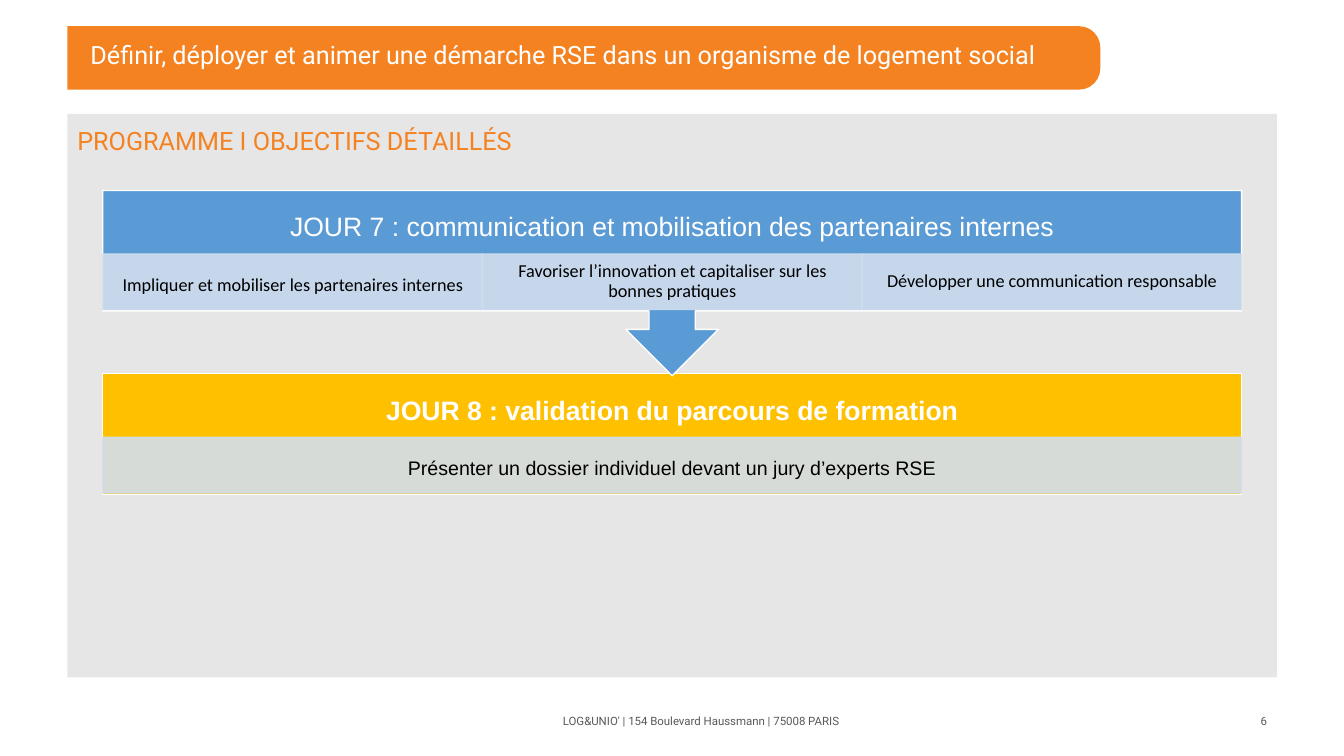
import pptx
import pptx.dml.color
import pptx.enum.shapes
import pptx.enum.text
import pptx.oxml
import pptx.oxml.ns
import pptx.util
from pptx.util import Cm

COLORS = {
    "orange": "F58221", "white": "FFFFFF", "panel": "E7E6E6", "grey": "58595B",
    "gold": "FFC000", "blue": "5B9BD5", "pale": "D2DEEF", "black": "000000",
}
SHAPES = pptx.enum.shapes.MSO_SHAPE
ALIGN = pptx.enum.text.PP_ALIGN
ANCHOR = pptx.enum.text.MSO_ANCHOR


def rgb(name):
    return pptx.dml.color.RGBColor.from_string(COLORS[name])


def make_translucent(fill_format, percent):
    """Set the opacity of a solid colour, in percent."""
    color = fill_format.fore_color._xFill[0]
    alpha = pptx.oxml.parse_xml(
        f'<a:alpha {pptx.oxml.ns.nsdecls("a")} val="{percent * 1000}"/>')
    color.append(alpha)


def add_block(page, kind, box, color, line=None, opacity=None):
    block = page.shapes.add_shape(kind, *map(Cm, box))
    block.shadow.inherit = False
    block.fill.solid()
    block.fill.fore_color.rgb = rgb(color)
    if line:
        block.line.color.rgb = rgb(line)
        block.line.width = pptx.util.Pt(1)
    else:
        block.line.fill.background()
    if opacity:
        make_translucent(block.fill, opacity)
        make_translucent(block.line.fill, opacity)
    return block


def write(shape, text, font, size, color, align=ALIGN.CENTER, spacing=1.0,
          bold=False, anchor=ANCHOR.MIDDLE, insets=(0.25, 0.13)):
    """Fill a shape with one paragraph; insets are horizontal and vertical."""
    frame = shape.text_frame
    frame.word_wrap = True
    frame.vertical_anchor = anchor
    frame.margin_left = frame.margin_right = Cm(insets[0])
    frame.margin_top = frame.margin_bottom = Cm(insets[1])
    para = frame.paragraphs[0]
    para.text = text
    para.alignment = align
    para.line_spacing = spacing
    para.font.name = font
    para.font.size = pptx.util.Pt(size)
    para.font.bold = bold
    para.font.color.rgb = rgb(color)


def add_text(page, box, *args, **options):
    write(page.shapes.add_textbox(*map(Cm, box)), *args, **options)


def add_title_bar(page, box):
    left, top, width, height = box
    bar = add_block(page, SHAPES.ROUNDED_RECTANGLE,
                    (left - 1.47, top, width + 1.47, height), "orange")
    bar.adjustments[0] = 0.336
    # Square off the left end of the bar
    add_block(page, SHAPES.RECTANGLE, (0, top - 0.28, left, height + 0.64), "white")
    add_text(page, (left + 0.33, top, width - 0.88, 1.52),
             "Définir, déployer et animer une démarche RSE dans un organisme "
             "de logement social",
             "Roboto", 18, "white", align=ALIGN.LEFT, spacing=0.9)


def add_panel(page, box):
    panel = add_block(page, SHAPES.RECTANGLE, box, "panel")
    write(panel, "PROGRAMME I OBJECTIFS DÉTAILLÉS", "Roboto", 18, "orange",
          align=ALIGN.LEFT, spacing=1.2, anchor=ANCHOR.TOP)


def add_day(page, box, kind, color, heading, goals, font, size, bold=False):
    """Draw a day's block: a heading above a row of equal goal cells."""
    left, top, width, height = box
    add_block(page, kind, box, color, line="white")
    add_text(page, (left, top, width, 1.65), heading, "Arial", 19, "white",
             spacing=1.2, bold=bold, insets=(0.38, 0.38))
    cell_width = width / len(goals)
    for index, (goal, spacing) in enumerate(goals):
        cell = add_block(page, SHAPES.RECTANGLE,
                         (left + index * cell_width, top + 1.6, cell_width, 1.4),
                         "pale", line="pale", opacity=90)
        write(cell, goal, font, size, "black", spacing=spacing, insets=(0.25, 0.05))


def add_footer(page, box):
    left, top, width, height = box
    add_text(page, (left, top, 12.88, height),
             "LOG&UNIO' | 154 Boulevard Haussmann | 75008 PARIS",
             "Roboto", 8.2, "grey")
    add_text(page, (left + width - 7.62, top, 7.62, height), "6",
             "Roboto", 8.2, "grey", align=ALIGN.RIGHT)


def main():
    deck = pptx.Presentation()
    deck.slide_width, deck.slide_height = Cm(33.87), Cm(19.05)
    page = deck.slides.add_slide(deck.slide_layouts[6])
    add_title_bar(page, (1.7, 0.66, 26.03, 1.6))
    add_panel(page, (1.7, 2.87, 30.48, 14.2))
    add_day(page, (2.59, 9.42, 28.7, 3.05), SHAPES.RECTANGLE, "gold",
            "JOUR 8 : validation du parcours de formation",
            [("Présenter un dossier individuel devant un jury d’experts RSE", 1.2)],
            "Arial", 14, bold=True)
    add_day(page, (2.59, 4.8, 28.7, 4.67), SHAPES.DOWN_ARROW_CALLOUT, "blue",
            "JOUR 7 : communication et mobilisation des partenaires internes",
            [("Impliquer et mobiliser les partenaires internes", 1.2),
             ("Favoriser l’innovation et capitaliser sur les bonnes pratiques", 0.9),
             ("Développer une communication responsable", 0.9)],
            "Calibri", 13)
    add_footer(page, (11.23, 17.65, 20.95, 1.02))
    deck.save("out.pptx")


if __name__ == "__main__":
    main()
